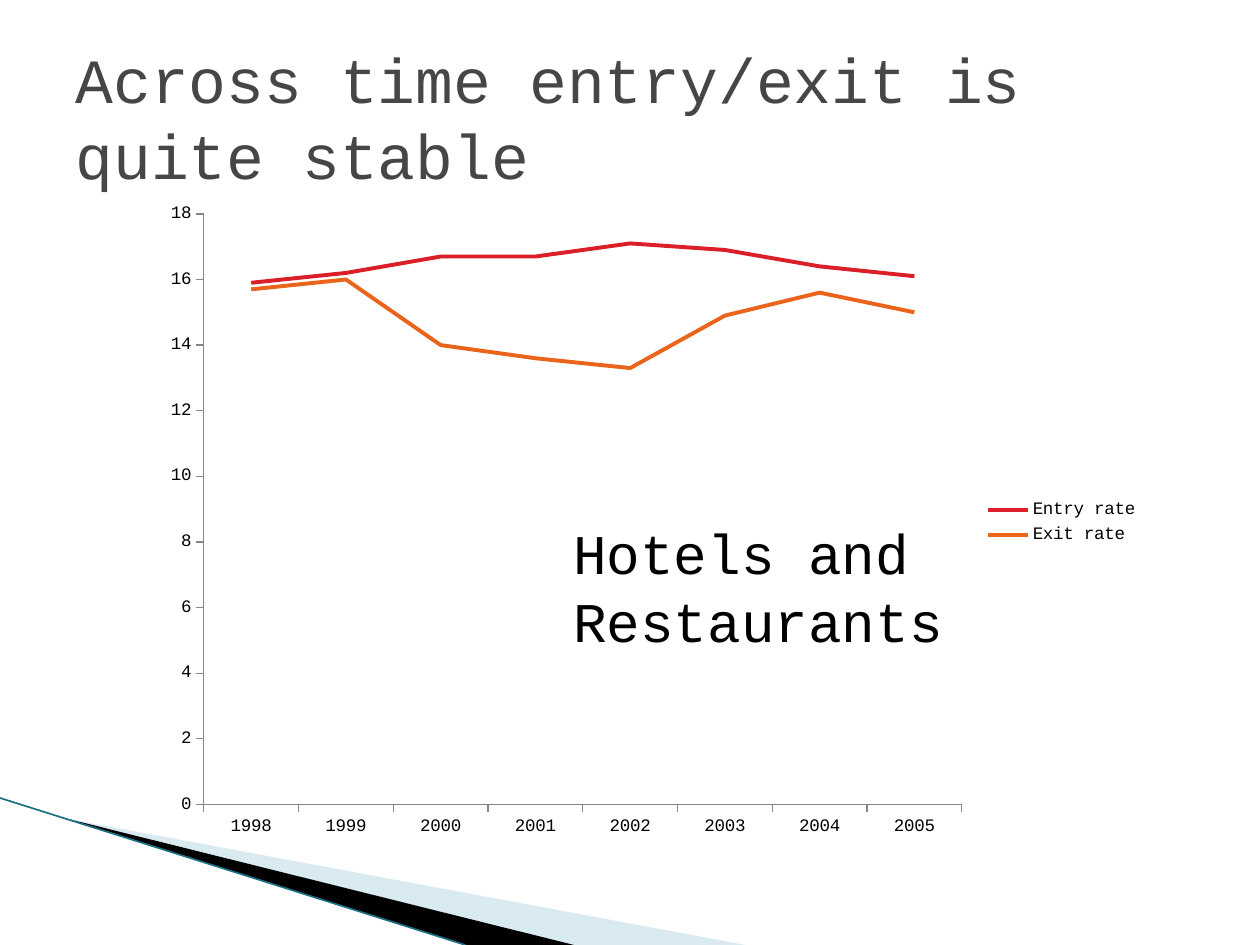
from dataclasses import dataclass

from lxml.etree import SubElement
from pptx import Presentation
from pptx.chart.data import CategoryChartData
from pptx.dml.color import RGBColor
from pptx.enum.chart import XL_CHART_TYPE as ChartType
from pptx.enum.chart import XL_LEGEND_POSITION as LegendPosition
from pptx.enum.chart import XL_TICK_MARK as TickMark
from pptx.enum.shapes import MSO_CONNECTOR as Connector
from pptx.enum.text import MSO_ANCHOR as Anchor
from pptx.enum.text import MSO_AUTO_SIZE as AutoSize
from pptx.enum.text import PP_ALIGN as Align
from pptx.oxml.ns import qn
from pptx.util import Pt


@dataclass(frozen=True)
class Theme:
    font: str = "Courier New"
    title_size: int = 36
    caption_size: int = 32
    chart_size: int = 10
    title: RGBColor = RGBColor(0x46, 0x46, 0x46)
    text: RGBColor = RGBColor(0, 0, 0)
    axis: RGBColor = RGBColor(0x86, 0x86, 0x86)
    entry: RGBColor = RGBColor(0xDA, 0x1F, 0x28)
    exit: RGBColor = RGBColor(0xEB, 0x64, 0x1B)
    pale_wedge: RGBColor = RGBColor(0xA0, 0xCB, 0xDC)
    dark_wedge: RGBColor = RGBColor(0, 0, 0)
    edge: RGBColor = RGBColor(0x1B, 0x70, 0x83)


THEME = Theme()
YEARS = [str(year) for year in range(1998, 2006)]
RATES = {
    "Entry rate": ([15.9, 16.2, 16.7, 16.7, 17.1, 16.9, 16.4, 16.1], THEME.entry),
    "Exit rate": ([15.7, 16, 14, 13.6, 13.3, 14.9, 15.6, 15], THEME.exit),
}


def style_font(font, size, color):
    font.name = THEME.font
    font.size = Pt(size)
    font.color.rgb = color


def write(frame, words, size, color, anchor):
    frame.word_wrap = True
    frame.vertical_anchor = anchor
    paragraph = frame.paragraphs[0]
    paragraph.alignment = Align.LEFT
    run = paragraph.add_run()
    run.text = words
    style_font(run.font, size, color)


def add_title(slide, left, top, width, height):
    title = slide.shapes.title
    title.left, title.top, title.width, title.height = map(Pt, (left, top, width, height))
    title.text_frame.auto_size = AutoSize.NONE
    write(title.text_frame, "Across time entry/exit is quite stable",
          THEME.title_size, THEME.title, Anchor.MIDDLE)


def add_caption(slide, left, top, width, height):
    caption = slide.shapes.add_textbox(*map(Pt, (left, top, width, height)))
    write(caption.text_frame, "Hotels and Restaurants",
          THEME.caption_size, THEME.text, Anchor.TOP)
    caption.text_frame.auto_size = AutoSize.SHAPE_TO_FIT_TEXT


def add_wedge(slide, corners, color, opacity=100):
    start, *others = [(Pt(x), Pt(y)) for x, y in corners]
    builder = slide.shapes.build_freeform(*start)
    builder.add_line_segments(others, close=True)
    wedge = builder.convert_to_shape()
    wedge.shadow.inherit = False
    wedge.fill.solid()
    wedge.fill.fore_color.rgb = color
    wedge.line.fill.background()
    if opacity < 100:
        srgb = wedge.fill._xPr.find(".//" + qn("a:srgbClr"))
        SubElement(srgb, qn("a:alpha"), val=str(opacity * 1000))


def add_corner_sweep(slide, left, top, width, height):
    """Two wedges and an edge line fanning out from the left to the bottom."""
    bottom = top + height
    tip_x, tip_y = left + 39, top + 12
    add_wedge(slide, [(tip_x, tip_y), (left + width, bottom), (left + 328, bottom)],
              THEME.pale_wedge, opacity=40)
    add_wedge(slide, [(tip_x, tip_y), (left + 328, bottom), (left + 266, bottom)],
              THEME.dark_wedge)
    edge = slide.shapes.add_connector(
        Connector.STRAIGHT, Pt(left), Pt(top), Pt(left + 266), Pt(bottom))
    edge.line.color.rgb = THEME.edge
    edge.line.width = Pt(0.95)
    SubElement(edge._element.spPr, qn("a:effectLst"))


def place_plot(chart, **fractions):
    """Fix the inner plot area, given as fractions of the chart."""
    plot_area = chart._chartSpace.chart.plotArea
    layout = plot_area.find(qn("c:layout"))
    if layout is None:
        layout = SubElement(plot_area, qn("c:layout"))
        plot_area.insert(0, layout)
    manual = SubElement(layout, qn("c:manualLayout"))
    SubElement(manual, qn("c:layoutTarget"), val="inner")
    for mode in ("xMode", "yMode"):
        SubElement(manual, qn("c:" + mode), val="edge")
    for name, value in fractions.items():
        SubElement(manual, qn("c:" + name), val=str(value))


def add_rate_chart(slide, left, top, width, height):
    data = CategoryChartData()
    data.categories = YEARS
    for name, (rates, _) in RATES.items():
        data.add_series(name, rates)
    chart = slide.shapes.add_chart(
        ChartType.LINE, *map(Pt, (left, top, width, height)), data).chart
    style_font(chart.font, THEME.chart_size, THEME.text)
    chart.has_title = False
    chart.has_legend = True
    chart.legend.position = LegendPosition.RIGHT
    chart.legend.include_in_layout = False
    place_plot(chart, x=0.05, y=0.03, w=0.76, h=0.9)

    for axis in (chart.category_axis, chart.value_axis):
        axis.has_major_gridlines = False
        axis.major_tick_mark = TickMark.OUTSIDE
        axis.minor_tick_mark = TickMark.NONE
        axis.format.line.color.rgb = THEME.axis
        axis.format.line.width = Pt(0.75)
    rate_axis = chart.value_axis
    rate_axis.minimum_scale, rate_axis.maximum_scale, rate_axis.major_unit = 0, 18, 2

    plot = chart.plots[0]
    plot.vary_by_categories = False
    for series, (_, color) in zip(plot.series, RATES.values()):
        series.smooth = False
        series.format.line.color.rgb = color
        series.format.line.width = Pt(2.25)


def main():
    deck = Presentation()
    deck.slide_width, deck.slide_height = Pt(720), Pt(540)
    slide = deck.slides.add_slide(deck.slide_layouts[5])
    add_corner_sweep(slide, 0, 456, 426, 84)
    add_rate_chart(slide, 88, 111, 570, 375)
    add_title(slide, 36, 21.6, 648, 90)
    add_caption(slide, 320.4, 293, 329, 85)
    deck.save("out.pptx")


if __name__ == "__main__":
    main()
